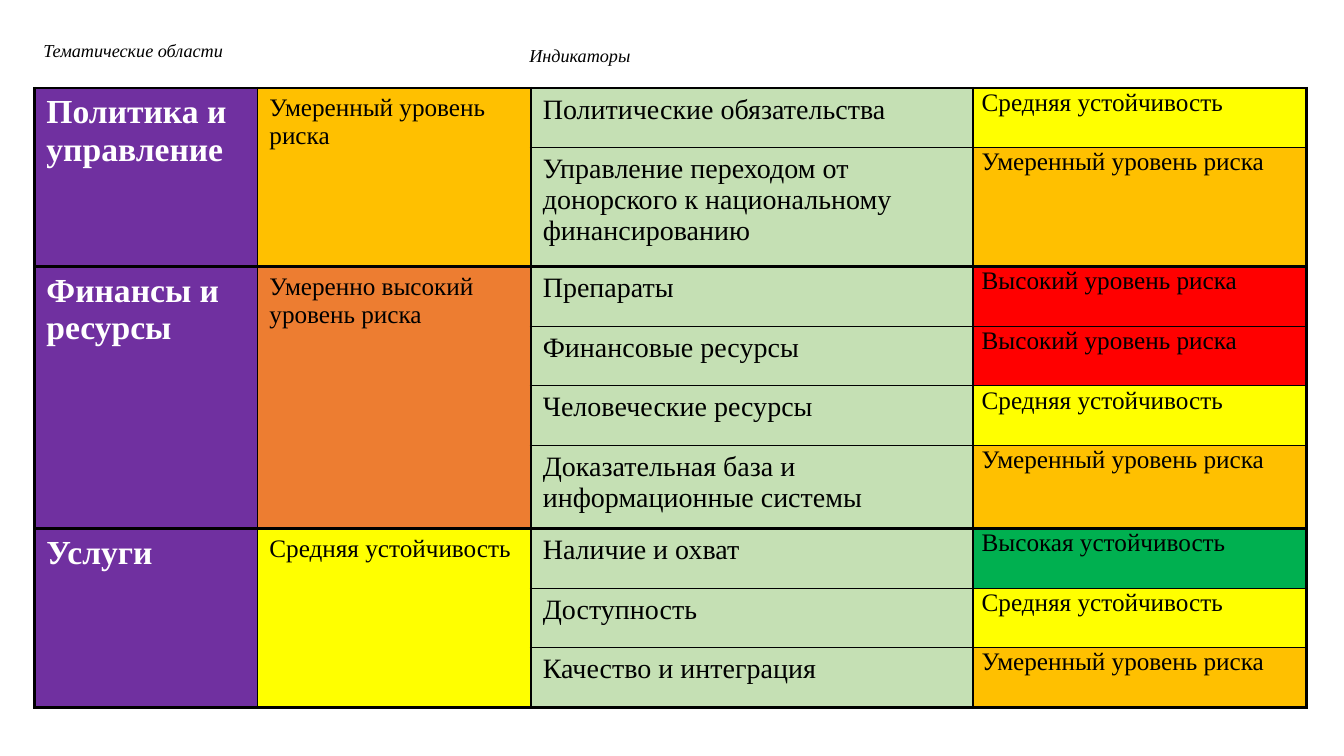
from lxml import etree
from pptx import Presentation
from pptx.dml.color import RGBColor
from pptx.oxml.ns import qn
from pptx.util import Cm, Pt

BLACK = RGBColor(0x00, 0x00, 0x00)
WHITE = RGBColor(0xFF, 0xFF, 0xFF)
PURPLE = RGBColor(0x70, 0x30, 0xA0)
PALE_GREEN = RGBColor(0xC5, 0xE0, 0xB4)
GREEN = RGBColor(0x00, 0xB0, 0x50)
YELLOW = RGBColor(0xFF, 0xFF, 0x00)
AMBER = RGBColor(0xFF, 0xC0, 0x00)
ORANGE = RGBColor(0xED, 0x7D, 0x31)
RED = RGBColor(0xFF, 0x00, 0x00)

FONT = "Times New Roman"
THIN, THICK = Pt(1), Pt(2.25)
WIDE_MARGINS = (Cm(0.3), Cm(0.15))
NARROW_MARGINS = (Cm(0.22), Cm(0.02))
INDICATOR_HEADING_INDENT = Cm(2.25)

HIGH_STABILITY = ("Высокая устойчивость", GREEN)
MEDIUM_STABILITY = ("Средняя устойчивость", YELLOW)
MODERATE_RISK = ("Умеренный уровень риска", AMBER)
RAISED_RISK = ("Умеренно высокий уровень риска", ORANGE)
HIGH_RISK = ("Высокий уровень риска", RED)

AREAS = [
    ("Политика и управление", MODERATE_RISK, [
        ("Политические обязательства", MEDIUM_STABILITY),
        ("Управление переходом от донорского к национальному финансированию",
         MODERATE_RISK),
    ]),
    ("Финансы и ресурсы", RAISED_RISK, [
        ("Препараты", HIGH_RISK),
        ("Финансовые ресурсы", HIGH_RISK),
        ("Человеческие ресурсы", MEDIUM_STABILITY),
        ("Доказательная база и информационные системы", MODERATE_RISK),
    ]),
    ("Услуги", MEDIUM_STABILITY, [
        ("Наличие и охват", HIGH_STABILITY),
        ("Доступность", MEDIUM_STABILITY),
        ("Качество и интеграция", MODERATE_RISK),
    ]),
]
COLUMN_WIDTHS = [Cm(width) for width in (5.62, 4.6, 2.29, 6.57, 4.57, 8.4)]
ROW_HEIGHTS = [Cm(height) for height in
               (1.19, 1.5, 3, 1.5, 1.5, 1.5, 2.1, 1.5, 1.5, 1.5)]


def set_borders(cell, **widths):
    """Draw black borders; sides are given in the order L, R, T, B."""
    properties = cell._tc.get_or_add_tcPr()
    for side, width in widths.items():
        line = etree.SubElement(properties, qn(f"a:ln{side}"), w=str(width))
        fill = etree.SubElement(line, qn("a:solidFill"))
        etree.SubElement(fill, qn("a:srgbClr"), val=str(BLACK))


def write_cell(cell, text, size, margins, fill=None, color=BLACK,
               bold=False, italic=False):
    side, top = margins
    cell.margin_left = cell.margin_right = side
    cell.margin_top = cell.margin_bottom = top
    if fill is None:
        cell.fill.background()
    else:
        cell.fill.solid()
        cell.fill.fore_color.rgb = fill
    cell.text_frame.text = text
    for span in cell.text_frame.paragraphs[0].runs:
        span.font.name, span.font.size = FONT, Pt(size)
        span.font.bold, span.font.italic = bold, italic
        span.font.color.rgb = color


def add_header(table):
    table.cell(0, 2).merge(table.cell(0, 3))
    headings = {0: ("Тематические области", NARROW_MARGINS),
                2: ("Индикаторы", WIDE_MARGINS)}
    for column in range(len(COLUMN_WIDTHS)):
        cell = table.cell(0, column)
        heading, margins = headings.get(column, ("", NARROW_MARGINS))
        set_borders(cell, B=THICK)
        write_cell(cell, heading, 13, margins, italic=True)
    table.cell(0, 2).margin_left = INDICATOR_HEADING_INDENT


def add_area(table, first, name, rating, indicators):
    last = first + len(indicators) - 1
    area, area_rating = table.cell(first, 0), table.cell(first, 1)
    area.merge(table.cell(last, 0))
    area_rating.merge(table.cell(last, 2))
    set_borders(area, L=THICK, R=THIN, T=THICK, B=THICK)
    set_borders(area_rating, L=THIN, R=THICK, T=THICK, B=THICK)
    write_cell(area, name, 24, WIDE_MARGINS, PURPLE, WHITE, bold=True)
    write_cell(area_rating, rating[0], 18, WIDE_MARGINS, rating[1])

    for row, (indicator, (level, level_color)) in enumerate(indicators, first):
        top = THICK if row == first else THIN
        bottom = THICK if row == last else THIN
        name_cell, level_cell = table.cell(row, 3), table.cell(row, 5)
        name_cell.merge(table.cell(row, 4))
        set_borders(name_cell, L=THICK, R=THIN, T=top, B=bottom)
        set_borders(level_cell, L=THIN, R=THICK, T=top, B=bottom)
        write_cell(name_cell, indicator, 20, WIDE_MARGINS, PALE_GREEN)
        write_cell(level_cell, level, 18, NARROW_MARGINS, level_color)


def add_risk_table(page):
    table = page.shapes.add_table(
        len(ROW_HEIGHTS), len(COLUMN_WIDTHS), Cm(0.87), Cm(1.03),
        sum(COLUMN_WIDTHS), sum(ROW_HEIGHTS)).table
    table.first_row = table.horz_banding = False
    for column, width in zip(table.columns, COLUMN_WIDTHS):
        column.width = width
    for row, height in zip(table.rows, ROW_HEIGHTS):
        row.height = height
    add_header(table)
    first = 1
    for name, rating, indicators in AREAS:
        add_area(table, first, name, rating, indicators)
        first += len(indicators)


def main():
    deck = Presentation()
    deck.slide_width, deck.slide_height = Cm(33.87), Cm(19.05)
    page = deck.slides.add_slide(deck.slide_layouts[6])
    add_risk_table(page)
    deck.save("out.pptx")


if __name__ == "__main__":
    main()
